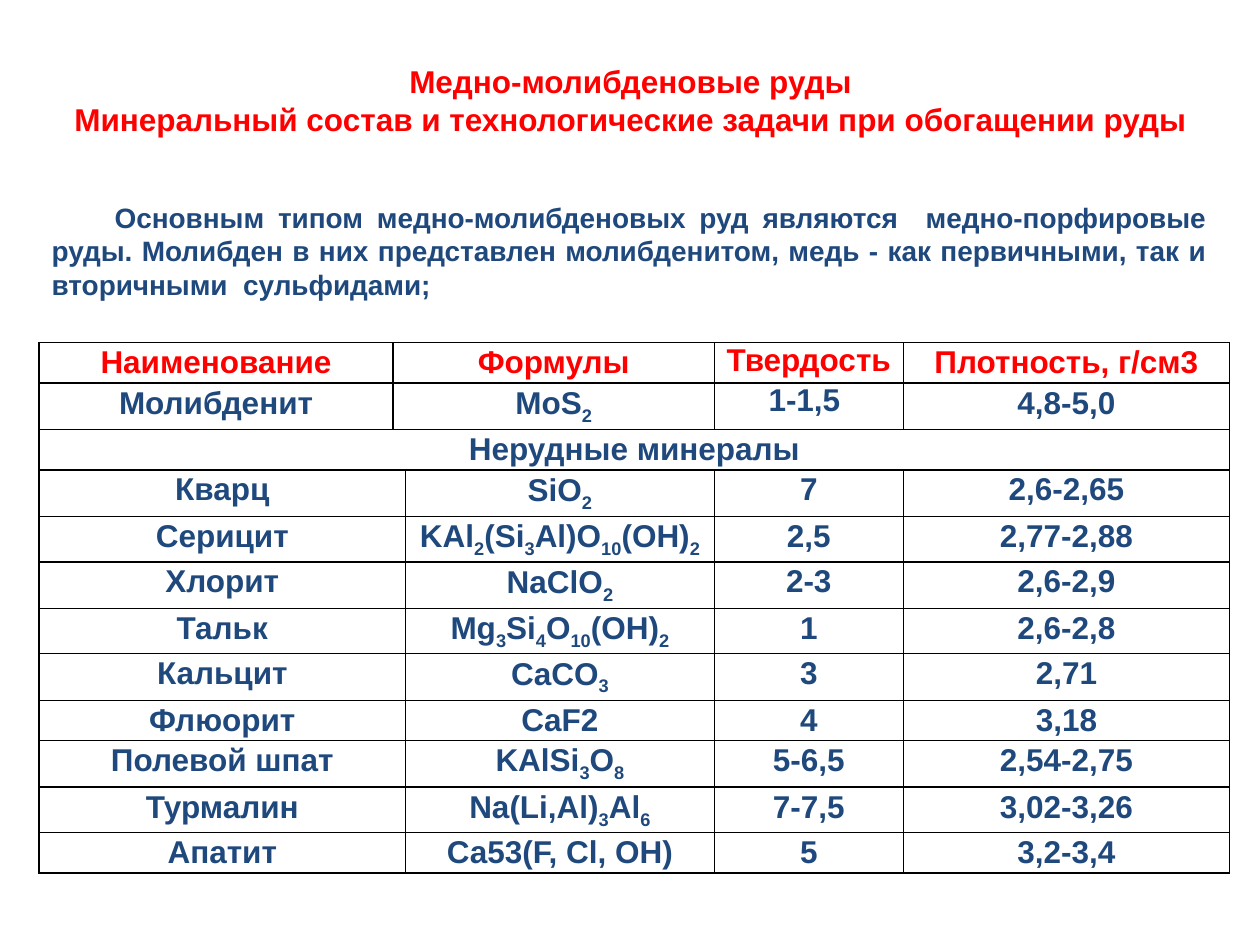
"""Build a slide on the mineral composition of copper-molybdenum ores."""
import pptx
import pptx.dml.color
import pptx.enum.text
import pptx.oxml
import pptx.oxml.ns
import pptx.util
from pptx.util import Inches

RED = pptx.dml.color.RGBColor(0xFF, 0x00, 0x00)
NAVY = pptx.dml.color.RGBColor(0x1F, 0x49, 0x7D)
BORDER = pptx.dml.color.RGBColor(0x00, 0x00, 0x00)
FONT = "Arial"
ALIGN = pptx.enum.text.PP_ALIGN

TITLE = [
    "Медно-молибденовые руды",
    "Минеральный состав и технологические задачи при обогащении руды",
]
INTRO = [
    "Основным типом медно-молибденовых руд являются  медно-порфировые руды. "
    "Молибден в них представлен молибденитом, медь - как первичными, так и "
    "вторичными  сульфидами; "
]
ORE_ROWS = [
    ("Наименование", "Формулы", "Твердость", "Плотность, г/см3"),
    ("Молибденит", "MoS_2_", "1-1,5 ", "4,8-5,0"),
]
SECTION = "Нерудные минералы"
GANGUE_ROWS = [
    ("Кварц", "SiO_2_", "7", "2,6-2,65"),
    ("Серицит", "KAl_2_(Si_3_Al)O_10_(OH)_2_", "2,5", "2,77-2,88"),
    ("Хлорит", "NaClO_2_", "2-3", "2,6-2,9"),
    ("Тальк", "Mg_3_Si_4_O_10_(OH)_2_", "1", "2,6-2,8"),
    ("Кальцит", "CaCO_3_", "3", "2,71"),
    ("Флюорит", "CaF2", "4", "3,18"),
    ("Полевой шпат", "KAlSi_3_O_8_", "5-6,5", "2,54-2,75"),
    ("Турмалин", "Na(Li,Al)_3_Al_6_", "7-7,5", "3,02-3,26"),
    ("Апатит", "Са53(F, Cl, ОН)", "5", "3,2-3,4"),
]
COLUMN_WIDTHS = [2.81, 0.07, 2.45, 1.5, 2.59]
ROW_HEIGHTS = [0.32, 0.37, 0.32, 0.37, 0.36, 0.37, 0.36, 0.37, 0.32, 0.37, 0.36, 0.32]
ORE_SPANS = [(0, 0), (1, 2), (3, 3), (4, 4)]
GANGUE_SPANS = [(0, 1), (2, 2), (3, 3), (4, 4)]


def add_run(paragraph, text, size, color):
    run = paragraph.add_run()
    run.text = text
    run.font.name = FONT
    run.font.size = pptx.util.Pt(size)
    run.font.bold = True
    run.font.color.rgb = color
    return run


def fill_placeholder(shape, box, lines, size, color, alignment):
    shape.left, shape.top, shape.width, shape.height = map(Inches, box)
    frame = shape.text_frame
    frame.word_wrap = True
    frame.auto_size = pptx.enum.text.MSO_AUTO_SIZE.NONE
    frame.vertical_anchor = pptx.enum.text.MSO_ANCHOR.TOP
    for index, line in enumerate(lines):
        paragraph = frame.paragraphs[0] if index == 0 else frame.add_paragraph()
        paragraph.alignment = alignment
        paragraph.space_before = pptx.util.Pt(0)
        add_run(paragraph, line, size, color)


def indent_first_line(paragraph, indent):
    properties = paragraph._p.get_or_add_pPr()
    properties.set("marL", "0")
    properties.set("indent", str(indent))
    properties.append(pptx.oxml.parse_xml(f"<a:buNone {pptx.oxml.ns.nsdecls('a')}/>"))


def format_cell(cell):
    cell.margin_left = cell.margin_right = Inches(0.03)
    cell.margin_top = cell.margin_bottom = 0
    properties = cell._tc.get_or_add_tcPr()
    for side in ("lnL", "lnR", "lnT", "lnB"):
        properties.append(pptx.oxml.parse_xml(
            f'<a:{side} {pptx.oxml.ns.nsdecls("a")} w="{pptx.util.Pt(1)}">'
            f'<a:solidFill><a:srgbClr val="{BORDER}"/></a:solidFill></a:{side}>'))
    cell.fill.background()


def write_cell(cell, text, color, spaced):
    paragraph = cell.text_frame.paragraphs[0]
    paragraph.alignment = ALIGN.CENTER
    if spaced:
        paragraph.line_spacing = 1.07
        paragraph.space_after = pptx.util.Pt(8)
    for index, part in enumerate(text.split("_")):
        if part:
            run = add_run(paragraph, part, 18, color)
            if index % 2:
                run.font._element.set("baseline", "-25000")


def add_mineral_table(slide):
    rows = [(texts, ORE_SPANS) for texts in ORE_ROWS]
    rows.append(((SECTION,), [(0, 4)]))
    rows += [(texts, GANGUE_SPANS) for texts in GANGUE_ROWS]
    table = slide.shapes.add_table(
        len(rows), len(COLUMN_WIDTHS), Inches(0.31), Inches(2.72),
        Inches(sum(COLUMN_WIDTHS)), Inches(sum(ROW_HEIGHTS))).table
    table.first_row = table.horz_banding = False
    for column, width in zip(table.columns, COLUMN_WIDTHS):
        column.width = Inches(width)
    for row, height in zip(table.rows, ROW_HEIGHTS):
        row.height = Inches(height)
    for cell in table.iter_cells():
        format_cell(cell)
    for row_index, (texts, spans) in enumerate(rows):
        color = RED if row_index == 0 else NAVY
        for text, (first, last) in zip(texts, spans):
            cell = table.cell(row_index, first)
            if last > first:
                cell.merge(table.cell(row_index, last))
            hardness_of_ore = row_index < len(ORE_ROWS) and first == 3
            write_cell(cell, text, color, not hardness_of_ore)


def main():
    presentation = pptx.Presentation()
    presentation.slide_width, presentation.slide_height = Inches(10), Inches(7.5)
    slide = presentation.slides.add_slide(presentation.slide_layouts[1])
    title, body = slide.placeholders
    fill_placeholder(title, (0.28, 0.44, 9.45, 0.71), TITLE, 18, RED, ALIGN.CENTER)
    fill_placeholder(body, (0.31, 1.54, 9.37, 0.91), INTRO, 16, NAVY, ALIGN.JUSTIFY)
    indent_first_line(body.text_frame.paragraphs[0], Inches(0.5))
    add_mineral_table(slide)
    presentation.save("out.pptx")


if __name__ == "__main__":
    main()
